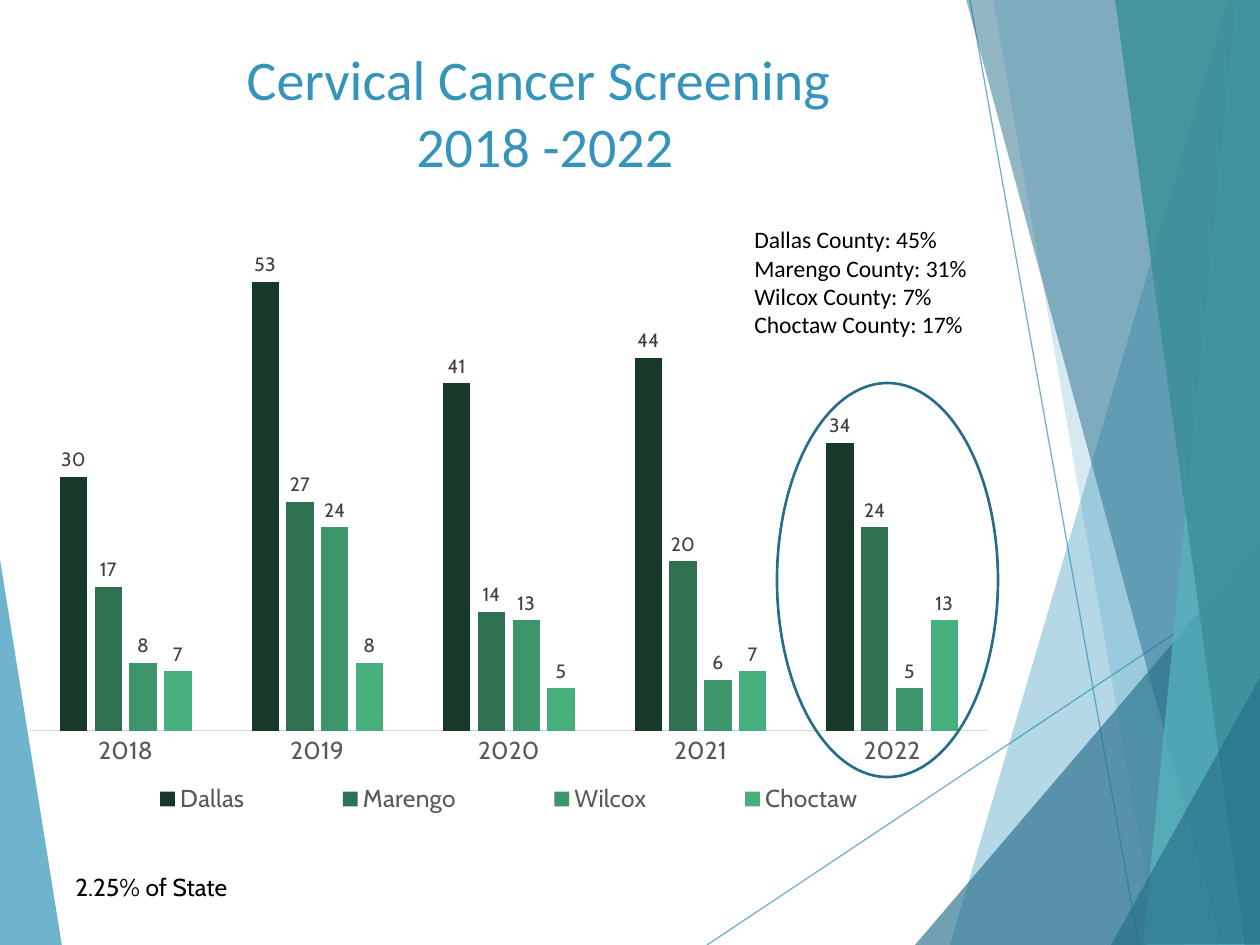
from lxml import etree
from pptx import Presentation
from pptx.chart.data import CategoryChartData
from pptx.dml.color import RGBColor
from pptx.enum.chart import XL_CHART_TYPE as ChartType, XL_LABEL_POSITION as LabelPosition
from pptx.enum.chart import XL_LEGEND_POSITION as LegendPosition, XL_TICK_MARK as TickMark
from pptx.enum.shapes import MSO_CONNECTOR as Connector, MSO_SHAPE as Shape
from pptx.enum.text import PP_ALIGN as Align
from pptx.oxml import parse_xml
from pptx.oxml.ns import nsdecls, qn
from pptx.util import Pt

PX = 914400 / 126
COLORS = {
    "blue": "3494BA", "deep": "276F8B", "aqua": "58B6C0", "teal": "3A8F98",
    "ring": "266D8A", "black": "000000", "gray": "595959", "label": "404040",
    "axis": "D9D9D9", "Dallas": "173929", "Marengo": "2E7051",
    "Wilcox": "3D956B", "Choctaw": "47AF7D",
}


def paint(fill, color, opacity=100):
    fill.solid()
    fill.fore_color.rgb = RGBColor.from_string(COLORS[color])
    if opacity < 100:
        node = fill._xPr.find(qn("a:solidFill"))[0]
        etree.SubElement(node, qn("a:alpha")).set("val", str(opacity * 1000))


def style(font, name, size, color):
    font.name = name
    font.size = Pt(size)
    font.color.rgb = RGBColor.from_string(COLORS[color])


presentation = Presentation()
presentation.slide_width = round(1260 * PX)
presentation.slide_height = round(945 * PX)
slide = presentation.slides.add_slide(presentation.slide_layouts[6])

lines = [(707, 945, 1261, 576), (970, 0, 1139, 945)]
for ends in lines:
    connector = slide.shapes.add_connector(Connector.STRAIGHT, *[round(v * PX) for v in ends])
    connector.line.width = Pt(0.75)
    paint(connector.line.fill, "blue", 70)
    etree.SubElement(connector._element.spPr, qn("a:effectLst"))

facets = [
    ([(-1, 553), (62, 946), (-1, 945)], "blue", 70),
    ([(1228, 0), (950, 945), (1262, 946), (1261, 1)], "blue", 36),
    ([(993, -1), (1158, 945), (1261, 945), (1261, -1)], "blue", 20),
    ([(915, 945), (1260, 541), (1261, 945)], "deep", 66),
    ([(966, -1), (1222, 945), (1261, 944), (1261, -1)], "deep", 50),
    ([(1236, -1), (1143, 945), (1261, 945), (1260, -1)], "aqua", 70),
    ([(1115, -1), (1245, 945), (1262, 945), (1260, -1)], "teal", 82),
    ([(1111, 945), (1262, 674), (1262, 944)], "deep", 66),
]
for points, color, opacity in facets:
    builder = slide.shapes.build_freeform(*points[0], scale=PX)
    builder.add_line_segments(points[1:], close=True)
    facet = builder.convert_to_shape()
    facet.shadow.inherit = False
    facet.line.fill.background()
    paint(facet.fill, color, opacity)

chart_data = CategoryChartData()
chart_data.categories = ["2018", "2019", "2020", "2021", "2022"]
screenings = {
    "Dallas": (30, 53, 41, 44, 34),
    "Marengo": (17, 27, 14, 20, 24),
    "Wilcox": (8, 24, 13, 6, 5),
    "Choctaw": (7, 8, 5, 7, 13),
}
for county, values in screenings.items():
    chart_data.add_series(county, values)
chart_box = [round(v * PX) for v in (10, 210, 998, 620)]
chart = slide.shapes.add_chart(ChartType.COLUMN_CLUSTERED, *chart_box, chart_data).chart
chart.has_title = False
style(chart.font, "Cabin", 10, "black")

plot = chart.plots[0]
plot.gap_width = 219
plot.overlap = -27
plot.vary_by_categories = False
for series in plot.series:
    paint(series.format.fill, series.name)
    labels = series.data_labels
    labels.show_value = True
    labels.position = LabelPosition.OUTSIDE_END
    style(labels.font, "Cabin", 11, "label")

value_axis = chart.value_axis
value_axis.minimum_scale = 0
value_axis.maximum_scale = 60
value_axis.has_major_gridlines = False
value_axis.visible = False
category_axis = chart.category_axis
category_axis.major_tick_mark = TickMark.NONE
category_axis.format.line.width = Pt(0.75)
paint(category_axis.format.line.fill, "axis")
style(category_axis.tick_labels.font, "Cabin", 14, "gray")

chart.has_legend = True
chart.legend.position = LegendPosition.BOTTOM
chart.legend.include_in_layout = False
style(chart.legend.font, "Cabin", 14, "gray")

layouts = [
    ("c:plotArea", 0, '<c:layoutTarget val="inner"/>', (0.02, 0.02, 0.96, 0.82)),
    ("c:legend", 1, "", (0.06, 0.91, 0.88, 0.08)),
]
for tag, index, target, box in layouts:
    parent = next(chart.element.iter(qn(tag)))
    for old in parent.findall(qn("c:layout")):
        parent.remove(old)
    modes = '<c:xMode val="edge"/><c:yMode val="edge"/>'
    sizes = "".join(f'<c:{key} val="{value}"/>' for key, value in zip("xywh", box))
    parent.insert(index, parse_xml(
        f'<c:layout {nsdecls("c")}><c:manualLayout>{target}{modes}{sizes}</c:manualLayout></c:layout>'))

ring = slide.shapes.add_shape(Shape.OVAL, *[round(v * PX) for v in (777, 383, 221, 394)])
ring.shadow.inherit = False
ring.fill.background()
ring.line.width = Pt(1.5)
paint(ring.line.fill, "ring")

counties = ["Dallas County: 45%", "Marengo County: 31%", "Wilcox County: 7%", "Choctaw County: 17%"]
texts = [
    ((-1, 38, 1092, 173), ["Cervical Cancer Screening \v2018 -2022"], "Calibri", 32, "blue", Align.CENTER),
    ((63, 866, 210, 43), ["2.25% of State"], "Cabin", 14, "black", Align.LEFT),
    ((742, 219, 291, 127), counties, "Calibri", 13.5, "black", Align.LEFT),
]
for box, paragraphs, font, size, color, alignment in texts:
    frame = slide.shapes.add_textbox(*[round(v * PX) for v in box]).text_frame
    frame.word_wrap = True
    for index, text in enumerate(paragraphs):
        paragraph = frame.add_paragraph() if index else frame.paragraphs[0]
        paragraph.alignment = alignment
        for part, piece in enumerate(text.split("\v")):
            if part:
                paragraph.add_line_break()
            run = paragraph.add_run()
            run.text = piece
            style(run.font, font, size, color)

presentation.save("out.pptx")
